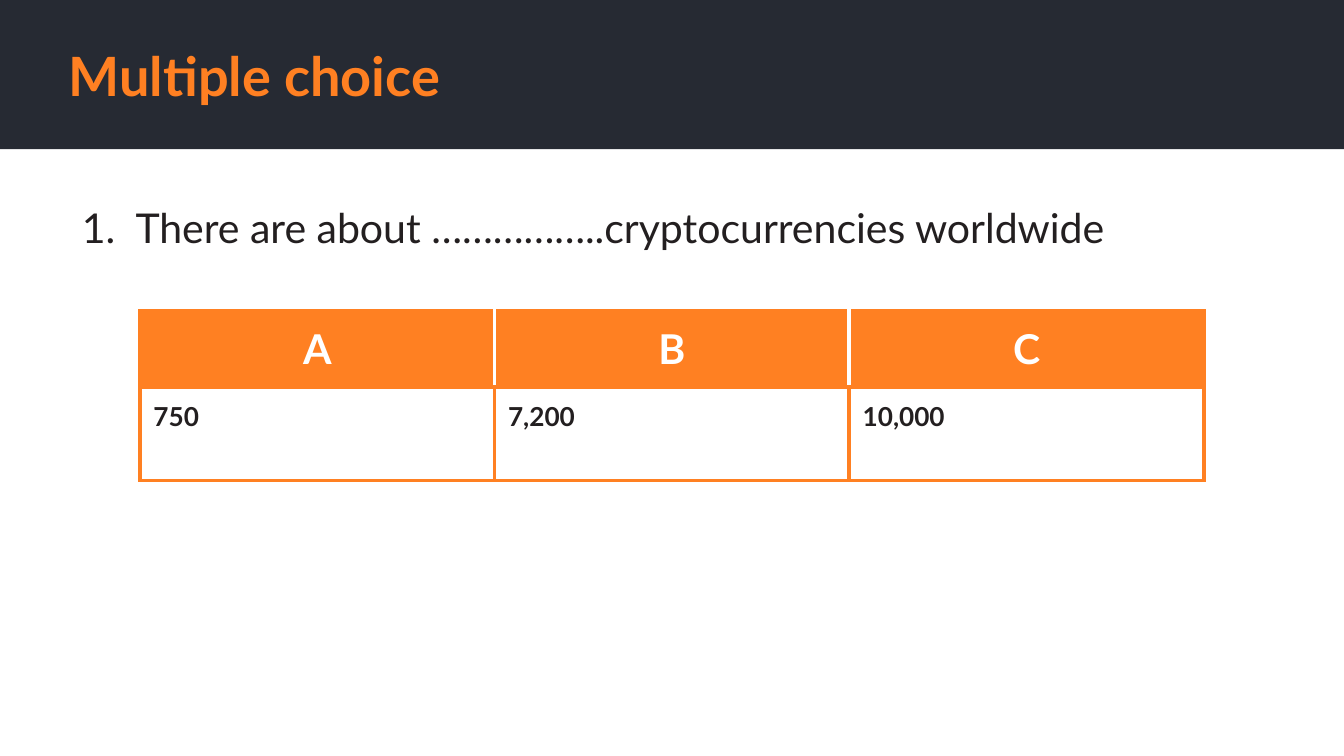
"""Build a multiple-choice quiz slide with a question and an answer table."""
from lxml import etree
from pptx import Presentation
from pptx.dml.color import RGBColor
from pptx.enum import shapes, text
from pptx.oxml import ns
from pptx.util import Pt

ORANGE = RGBColor(0xFF, 0x80, 0x22)
DARK = RGBColor(0x26, 0x2A, 0x33)
INK = RGBColor(0x23, 0x1F, 0x20)
WHITE = RGBColor(0xFF, 0xFF, 0xFF)
INSET = Pt(7.2)
ANSWERS = {"A": "750", "B": "7,200", "C": "10,000"}


def write(holder, content, size, color, bold, alignment=text.PP_ALIGN.LEFT):
    holder.margin_left = holder.margin_right = INSET
    holder.margin_top = holder.margin_bottom = INSET
    holder.text_frame.text = content
    paragraph = holder.text_frame.paragraphs[0]
    paragraph.alignment = alignment
    font = paragraph.runs[0].font
    font.name, font.size, font.bold = "Lato", Pt(size), bold
    font.color.rgb = color
    return paragraph


def add_border(cell, side, color):
    properties = cell._tc.get_or_add_tcPr()
    line = etree.SubElement(properties, ns.qn(f"a:ln{side}"), w=str(Pt(2.25)))
    fill = etree.SubElement(line, ns.qn("a:solidFill"))
    etree.SubElement(fill, ns.qn("a:srgbClr"), val=str(color))


presentation = Presentation()
presentation.slide_width, presentation.slide_height = Pt(720), Pt(405)
slide = presentation.slides.add_slide(presentation.slide_layouts[5])

title = slide.shapes.title
title.left, title.top, title.width, title.height = Pt(29.5), Pt(20.2), Pt(629.3), Pt(40.3)
frame = title.text_frame
frame.margin_left = frame.margin_right = frame.margin_top = frame.margin_bottom = INSET
frame.vertical_anchor = text.MSO_ANCHOR.MIDDLE
frame.auto_size = text.MSO_AUTO_SIZE.NONE
frame.text = "Multiple choice"
frame.paragraphs[0].alignment = text.PP_ALIGN.LEFT
font = frame.paragraphs[0].runs[0].font
font.name, font.size, font.bold = "Lato", Pt(29), True
font.color.rgb = ORANGE

band = slide.shapes.add_shape(shapes.MSO_SHAPE.RECTANGLE, 0, 0, Pt(720), Pt(80))
band.shadow.inherit = False
band.fill.solid()
band.fill.fore_color.rgb = DARK
band.line.fill.background()
title._element.addprevious(band._element)

question = slide.shapes.add_textbox(Pt(29.5), Pt(101.5), Pt(603.4), Pt(67.7))
frame = question.text_frame
frame.word_wrap = True
frame.margin_left = frame.margin_right = frame.margin_top = frame.margin_bottom = INSET
frame.text = "There are about ……………..cryptocurrencies worldwide"
paragraph = frame.paragraphs[0]
properties = paragraph._p.get_or_add_pPr()
properties.set("marL", str(Pt(36)))
properties.set("indent", str(Pt(-28.8)))
bullet_color = etree.SubElement(properties, ns.qn("a:buClr"))
etree.SubElement(bullet_color, ns.qn("a:srgbClr"), val=str(INK))
etree.SubElement(properties, ns.qn("a:buFont"), typeface="Lato")
etree.SubElement(properties, ns.qn("a:buAutoNum"), type="arabicPeriod")
font = paragraph.runs[0].font
font.name, font.size = "Lato", Pt(22)
font.color.rgb = INK

table = slide.shapes.add_table(2, len(ANSWERS), Pt(75), Pt(166.5), Pt(570), Pt(91)).table
table.rows[0].height, table.rows[1].height = Pt(41), Pt(50)
last = len(ANSWERS) - 1
for column, (letter, answer) in enumerate(ANSWERS.items()):
    table.columns[column].width = Pt(190)
    header, choice = table.cell(0, column), table.cell(1, column)
    write(header, letter, 22, WHITE, True, text.PP_ALIGN.CENTER)
    write(choice, answer, 14, INK, True)
    for cell, divider, background in ((header, WHITE, ORANGE), (choice, ORANGE, WHITE)):
        add_border(cell, "L", divider if column > 0 else ORANGE)
        add_border(cell, "R", divider if column < last else ORANGE)
        add_border(cell, "T", ORANGE)
        add_border(cell, "B", ORANGE)
        cell.fill.solid()
        cell.fill.fore_color.rgb = background

presentation.save("out.pptx")
